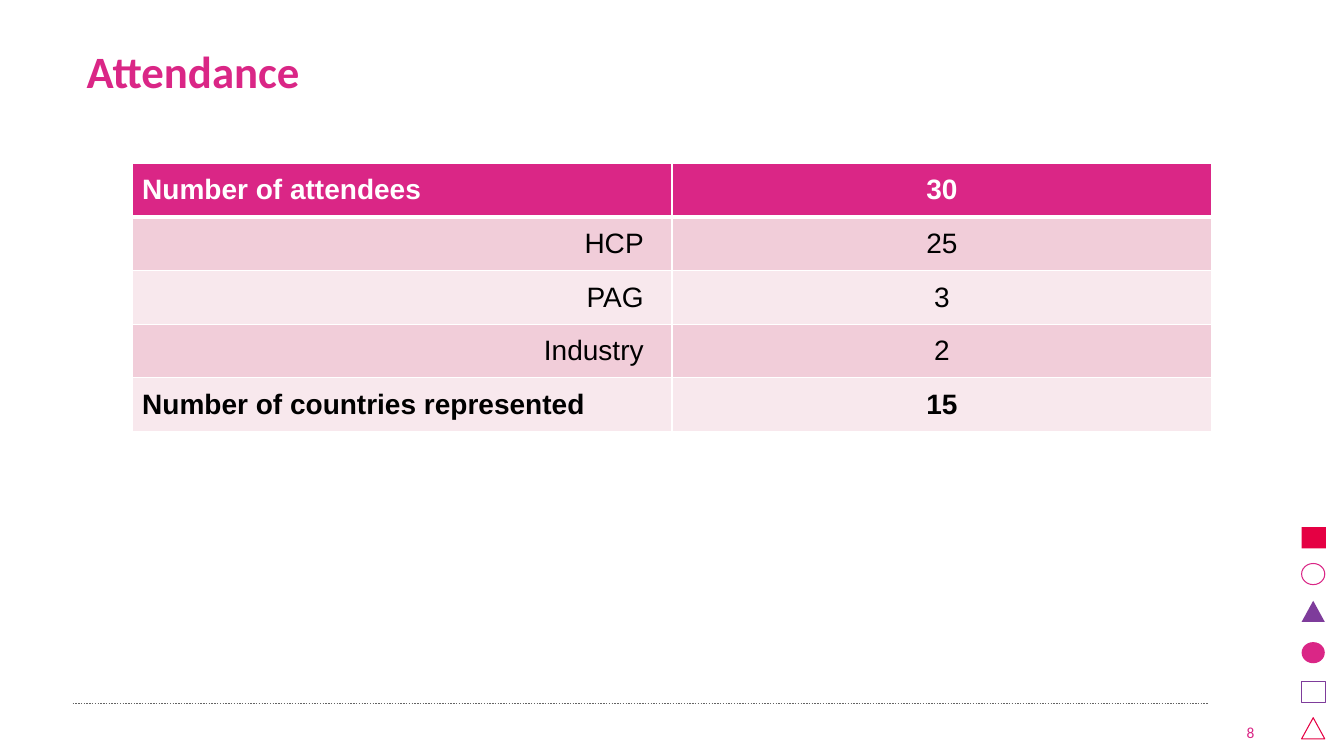
from dataclasses import dataclass

from lxml.etree import SubElement
from pptx import Presentation
from pptx.dml.color import RGBColor
from pptx.enum.dml import MSO_LINE
from pptx.enum.shapes import MSO_CONNECTOR, MSO_SHAPE
from pptx.enum.text import MSO_ANCHOR, PP_ALIGN
from pptx.oxml.ns import qn
from pptx.slide import Slide
from pptx.table import _Cell
from pptx.text.text import TextFrame
from pptx.util import Inches, Pt

PINK = RGBColor(0xDA, 0x26, 0x86)
RED = RGBColor(0xE5, 0x00, 0x43)
PURPLE = RGBColor(0x7E, 0x3C, 0x9B)
GREY = RGBColor(0x64, 0x64, 0x64)
WHITE = RGBColor(0xFF, 0xFF, 0xFF)
BLACK = RGBColor(0x00, 0x00, 0x00)
DARK_BAND = RGBColor(0xF1, 0xCD, 0xD9)
LIGHT_BAND = RGBColor(0xF8, 0xE8, 0xED)

COLUMN_WIDTH = 5.355
ROW_HEIGHT = 0.532


@dataclass(frozen=True)
class Marker:
    kind: MSO_SHAPE
    top: float
    width: float
    color: RGBColor
    filled: bool


@dataclass(frozen=True)
class AttendanceRow:
    label: str
    count: int
    is_total: bool = False
    level: int = 0


MARKERS = [
    Marker(MSO_SHAPE.RECTANGLE, 5.23, 0.24, RED, True),
    Marker(MSO_SHAPE.OVAL, 6.37, 0.23, PINK, True),
    Marker(MSO_SHAPE.ISOSCELES_TRIANGLE, 5.96, 0.23, PURPLE, True),
    Marker(MSO_SHAPE.RECTANGLE, 6.76, 0.24, PURPLE, False),
    Marker(MSO_SHAPE.OVAL, 5.59, 0.23, PINK, False),
    Marker(MSO_SHAPE.ISOSCELES_TRIANGLE, 7.12, 0.23, RED, False),
]

ATTENDANCE = [
    AttendanceRow("Number of attendees", 30, is_total=True),
    AttendanceRow("HCP", 25, level=1),
    AttendanceRow("PAG", 3, level=1),
    AttendanceRow("Industry", 2),
    AttendanceRow("Number of countries represented", 15, is_total=True),
]


def write_text(
    text_frame: TextFrame,
    text: str,
    *,
    size: float,
    color: RGBColor,
    font: str = "Calibri",
    bold: bool = False,
    alignment: PP_ALIGN = PP_ALIGN.LEFT,
    level: int = 0,
    line_spacing: float = 1.0,
) -> None:
    paragraph = text_frame.paragraphs[0]
    paragraph.alignment = alignment
    paragraph.level = level
    paragraph.line_spacing = line_spacing
    run = paragraph.add_run()
    run.text = text
    run.font.name = font
    run.font.size = Pt(size)
    run.font.bold = bold
    run.font.color.rgb = color


def draw_marker(slide: Slide, marker: Marker) -> None:
    shape = slide.shapes.add_shape(
        marker.kind, Inches(12.91), Inches(marker.top), Inches(marker.width), Inches(0.21)
    )
    shape.shadow.inherit = False
    if marker.filled:
        shape.fill.solid()
        shape.fill.fore_color.rgb = marker.color
        shape.line.fill.background()
    else:
        shape.fill.background()
        shape.line.color.rgb = marker.color
        shape.line.width = Pt(0.75)


def draw_footer(slide: Slide) -> None:
    rule = slide.shapes.add_connector(
        MSO_CONNECTOR.STRAIGHT, Inches(0.72), Inches(6.98), Inches(11.99), Inches(6.98)
    )
    rule.line.color.rgb = GREY
    rule.line.width = Pt(1)
    rule.line.dash_style = MSO_LINE.ROUND_DOT
    SubElement(rule._element.spPr, qn("a:effectLst"))

    page_number = slide.shapes.add_textbox(
        Inches(11.96), Inches(7.01), Inches(0.58), Inches(0.4)
    ).text_frame
    page_number.word_wrap = True
    page_number.vertical_anchor = MSO_ANCHOR.BOTTOM
    write_text(page_number, "8", size=11, color=PINK, alignment=PP_ALIGN.RIGHT)


def draw_title(slide: Slide) -> None:
    title = slide.shapes.title
    title.left, title.top = Inches(0.76), Inches(0.17)
    title.width, title.height = Inches(11.81), Inches(1.12)
    title.text_frame.vertical_anchor = MSO_ANCHOR.MIDDLE
    write_text(
        title.text_frame, "Attendance", size=32, color=PINK, bold=True, line_spacing=0.9
    )


def set_borders(cell: _Cell, top: float, bottom: float) -> None:
    properties = cell._tc.get_or_add_tcPr()
    for side, width in (("L", 1), ("R", 1), ("T", top), ("B", bottom)):
        border = SubElement(properties, qn(f"a:ln{side}"), w=str(Pt(width)))
        fill = SubElement(border, qn("a:solidFill"))
        SubElement(fill, qn("a:srgbClr"), val=str(WHITE))


def draw_attendance(slide: Slide) -> None:
    table = slide.shapes.add_table(
        len(ATTENDANCE),
        2,
        Inches(1.31),
        Inches(1.62),
        Inches(2 * COLUMN_WIDTH),
        Inches(len(ATTENDANCE) * ROW_HEIGHT),
    ).table
    for column in table.columns:
        column.width = Inches(COLUMN_WIDTH)
    for index, record in enumerate(ATTENDANCE):
        table.rows[index].height = Inches(ROW_HEIGHT)
        band = DARK_BAND if index % 2 else LIGHT_BAND
        label_alignment = PP_ALIGN.LEFT if record.is_total else PP_ALIGN.RIGHT
        entries = (
            (record.label, label_alignment, record.level),
            (str(record.count), PP_ALIGN.CENTER, 0),
        )
        for column_index, (text, alignment, level) in enumerate(entries):
            cell = table.cell(index, column_index)
            set_borders(cell, top=3 if index == 1 else 1, bottom=3 if index == 0 else 1)
            cell.fill.solid()
            cell.fill.fore_color.rgb = PINK if index == 0 else band
            cell.vertical_anchor = MSO_ANCHOR.MIDDLE
            if alignment == PP_ALIGN.RIGHT:
                cell.margin_right = Inches(0.28)
            write_text(
                cell.text_frame,
                text,
                size=20,
                color=WHITE if index == 0 else BLACK,
                font="Arial",
                bold=record.is_total,
                alignment=alignment,
                level=level,
            )


def main() -> None:
    presentation = Presentation()
    presentation.slide_width = Inches(13.33)
    presentation.slide_height = Inches(7.5)
    slide = presentation.slides.add_slide(presentation.slide_layouts[5])
    for marker in MARKERS:
        draw_marker(slide, marker)
    draw_footer(slide)
    draw_title(slide)
    draw_attendance(slide)
    presentation.save("out.pptx")


if __name__ == "__main__":
    main()
